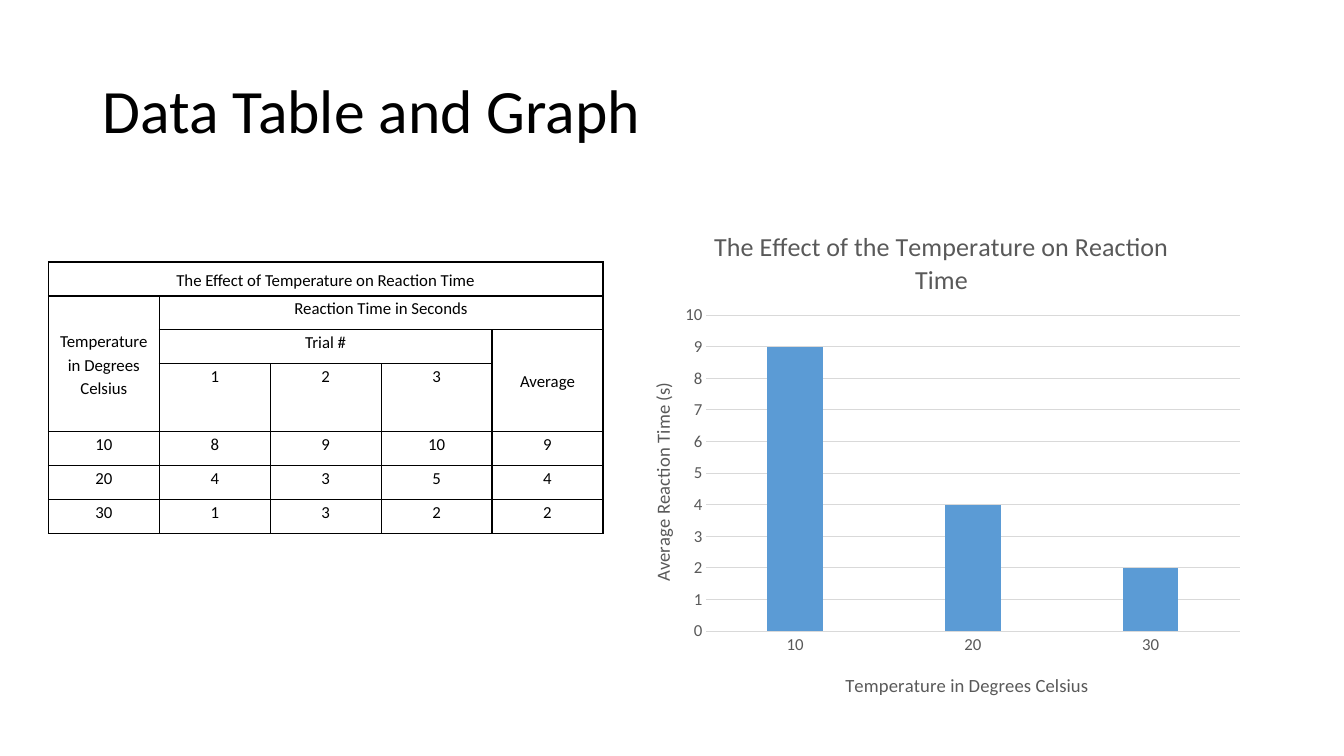
import pptx
import pptx.util
import pptx.chart.data
import pptx.dml.color
import pptx.enum.chart
import pptx.enum.text
import pptx.oxml
import pptx.oxml.ns

Inches, Pt = pptx.util.Inches, pptx.util.Pt
Align, Anchor = pptx.enum.text.PP_ALIGN, pptx.enum.text.MSO_ANCHOR
HEX = {"ink": "000000", "gray": "595959", "grid": "D9D9D9", "bar": "5B9BD5"}
FONT = "Calibri"
TEMP = "Temperature in Degrees Celsius"
CELLS = [
    ["The Effect of Temperature on Reaction Time"],
    [TEMP, "Reaction Time in Seconds"],
    ["", "Trial #", "", "", "Average"],
    ["", "1", "2", "3", ""],
    ["10", "8", "9", "10", "9"],
    ["20", "4", "3", "5", "4"],
    ["30", "1", "3", "2", "2"],
]
SPANS = [(0, 0, 0, 4), (1, 0, 3, 0), (1, 1, 1, 4), (2, 1, 2, 3), (2, 4, 3, 4)]
MIDDLE = [(0, 0), (1, 0), (2, 4)]


def color(name):
    """Return a palette colour."""
    return pptx.dml.color.RGBColor.from_string(HEX[name])


def style(font, size, name):
    """Set face, size and colour of a font."""
    font.name, font.size, font.bold = FONT, Pt(size), False
    font.color.rgb = color(name)


def node(tag, body=""):
    """Parse one XML element in the drawing or chart namespace."""
    head, _, rest = tag.partition(" ")
    space = pptx.oxml.ns.nsdecls("a", "c")
    return pptx.oxml.parse_xml(f"<{head} {space} {rest}>{body}</{head}>")


def add_title(slide, left, top, width, height):
    """Add the slide heading."""
    frame = slide.shapes.add_textbox(left, top, width, height).text_frame
    frame.word_wrap = True
    frame.vertical_anchor = Anchor.MIDDLE
    frame.text = "Data Table and Graph"
    line = frame.paragraphs[0]
    line.line_spacing = 0.9
    style(line.runs[0].font, 44, "ink")


def edge(cell):
    """Draw thin borders on all sides of a cell."""
    props = cell._tc.get_or_add_tcPr()
    fill = f'<a:solidFill><a:srgbClr val="{HEX["ink"]}"/></a:solidFill>'
    for spot, side in enumerate("LRTB"):
        props.insert(spot, node(f'a:ln{side} w="{Pt(1)}"', fill))


def add_data(slide, left, top, width, height):
    """Add the table of trials."""
    rows, cols = len(CELLS), len(CELLS[-1])
    table = slide.shapes.add_table(rows, cols, left, top, width, height).table
    table.first_row = table.horz_banding = False
    for col in table.columns:
        col.width = int(width / cols)
    for i, row in enumerate(table.rows):
        row.height = int(height / (rows + 1)) * (2 if i == 3 else 1)
    for r, c, r2, c2 in SPANS:
        table.cell(r, c).merge(table.cell(r2, c2))
    for r in range(rows):
        for c in range(cols):
            cell = table.cell(r, c)
            cell.fill.background()
            cell.margin_left = cell.margin_right = Inches(0.07)
            cell.margin_top = cell.margin_bottom = 0
            edge(cell)
            if (r, c) in MIDDLE:
                cell.vertical_anchor = Anchor.MIDDLE
            if c < len(CELLS[r]) and CELLS[r][c]:
                cell.text_frame.text = CELLS[r][c]
                line = cell.text_frame.paragraphs[0]
                line.alignment = Align.CENTER
                line.line_spacing, line.space_after = 1.15, Pt(10)
                style(line.runs[0].font, 12, "ink")


def layout(**spots):
    """Build a manual chart layout from fractions of the chart."""
    modes = '<c:xMode val="edge"/><c:yMode val="edge"/>'
    if "w" in spots:
        modes = '<c:layoutTarget val="inner"/>' + modes
    body = modes + "".join(f'<c:{k} val="{v}"/>' for k, v in spots.items())
    return node("c:layout", f"<c:manualLayout>{body}</c:manualLayout>")


def label(title, text, size, x, y):
    """Write a chart or axis title at a fixed spot."""
    title.text_frame.text = text
    style(title.text_frame.paragraphs[0].runs[0].font, size, "gray")
    root = title._element
    for old in root.findall(pptx.oxml.ns.qn("c:layout")):
        root.remove(old)
    root.find(pptx.oxml.ns.qn("c:tx")).addnext(layout(x=x, y=y))


def add_graph(slide, left, top, width, height):
    """Add the column chart of averages."""
    kinds = pptx.enum.chart
    data = pptx.chart.data.CategoryChartData()
    data.categories = ["10", "20", "30"]
    data.add_series("Series 1", [9, 4, 2])
    chart = slide.shapes.add_chart(
        kinds.XL_CHART_TYPE.COLUMN_CLUSTERED, left, top, width, height, data
    ).chart
    style(chart.font, 10, "ink")
    chart.has_legend = False
    label(chart.chart_title, "The Effect of the Temperature on Reaction Time",
          18.6, 0.14, 0.05)
    chart.chart_title.include_in_layout = False
    plot = chart.plots[0]
    plot.gap_width, plot.overlap, plot.vary_by_categories = 219, -27, False
    fill = plot.series[0].format.fill
    fill.solid()
    fill.fore_color.rgb = color("bar")
    base, side = chart.category_axis, chart.value_axis
    for axis in (base, side):
        axis.major_tick_mark = axis.minor_tick_mark = kinds.XL_TICK_MARK.NONE
        style(axis.tick_labels.font, 12, "gray")
    side.minimum_scale, side.maximum_scale, side.major_unit = 0, 10, 1
    side.has_major_gridlines = True
    side.format.line.fill.background()
    for line in (base.format.line, side.major_gridlines.format.line):
        line.color.rgb, line.width = color("grid"), Pt(0.75)
    label(base.axis_title, TEMP, 13.3, 0.35, 0.91)
    label(side.axis_title, "Average Reaction Time (s)", 13.3, 0.04, 0.35)
    turn = side.axis_title.text_frame._txBody.bodyPr
    turn.set("rot", "-5400000")
    turn.set("vert", "horz")
    area = chart._chartSpace.chart.plotArea
    for old in area.findall(pptx.oxml.ns.qn("c:layout")):
        area.remove(old)
    area.insert(0, layout(x=0.135, y=0.227, w=0.845, h=0.61))


def main():
    """Build and save the slide."""
    deck = pptx.Presentation()
    deck.slide_width, deck.slide_height = Inches(13.33), Inches(7.5)
    slide = deck.slides.add_slide(deck.slide_layouts[6])
    add_title(slide, Inches(0.92), Inches(0.4), Inches(11.5), Inches(1.45))
    add_data(slide, Inches(0.48), Inches(2.6), Inches(5.5), Inches(2.69))
    add_graph(slide, Inches(6.16), Inches(1.96), Inches(6.26), Inches(5.14))
    deck.save("out.pptx")


if __name__ == "__main__":
    main()
